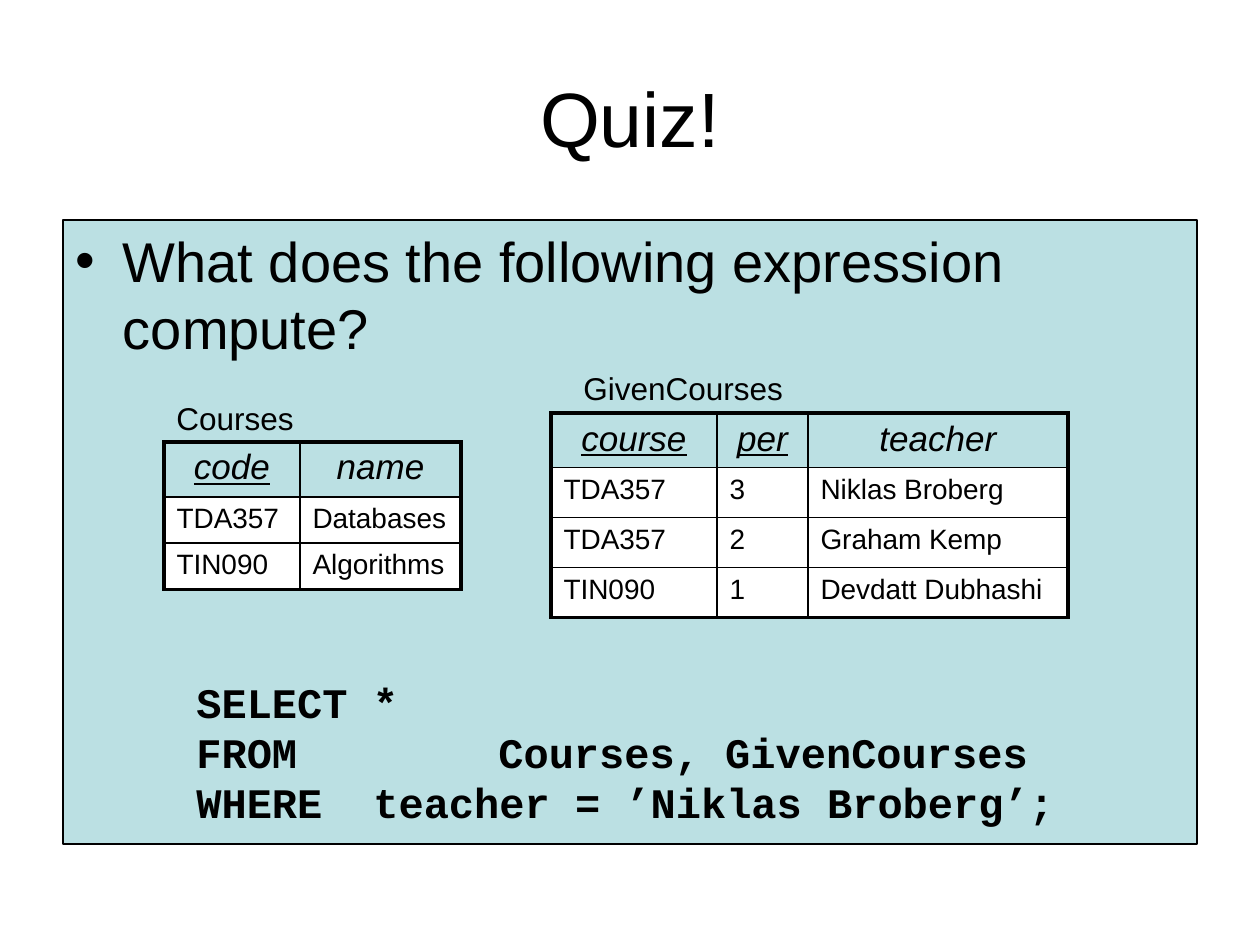
from collections import namedtuple

from lxml.etree import SubElement
from pptx import Presentation
from pptx.dml.color import RGBColor
from pptx.enum.text import MSO_ANCHOR as Anchor, MSO_AUTO_SIZE as AutoSize, PP_ALIGN as Align
from pptx.oxml.ns import qn
from pptx.util import Emu, Pt

PX = 914400 / 126
COLORS = {"ink": "000000", "panel": "BBE0E3", "cell": "FFFFFF"}
THICK, THIN = 2.25, 1
Box = namedtuple("Box", "left top width height")


def px(length):
    return Emu(round(length * PX))


def color(name):
    return RGBColor.from_string(COLORS[name])


def inside(box, left, top, width, height):
    return Box(box.left + left, box.top + top, width, height)


def place(shape, box):
    shape.left, shape.top, shape.width, shape.height = map(px, box)


def set_font(para, size, name="Arial", bold=False, italic=False):
    font = para.font
    font.name, font.size, font.bold, font.italic = name, Pt(size), bold, italic
    font.color.rgb = color("ink")


def add_title(page, box, text):
    title = page.shapes.title
    place(title, box)
    title.text_frame.text = text
    title.text_frame.vertical_anchor = Anchor.MIDDLE
    set_font(title.text_frame.paragraphs[0], 44)


def add_question(page, box, text):
    panel = page.placeholders[1]
    place(panel, box)
    panel.fill.solid()
    panel.fill.fore_color.rgb = color("panel")
    panel.line.color.rgb = color("ink")
    panel.line.width = Pt(0.75)
    panel.text_frame.auto_size = AutoSize.NONE
    panel.text_frame.text = text
    set_font(panel.text_frame.paragraphs[0], 32)


def add_text_box(page, box):
    frame = page.shapes.add_textbox(*map(px, box)).text_frame
    frame.word_wrap = True
    return frame


def add_tab_stop(para, position):
    properties = para._p.get_or_add_pPr()
    stops = SubElement(properties, qn("a:tabLst"))
    SubElement(stops, qn("a:tab"), pos=str(px(position)), algn="l")


def add_query(page, box, clauses):
    frame = add_text_box(page, box)
    for index, (text, tab) in enumerate(clauses):
        para = frame.add_paragraph() if index else frame.paragraphs[0]
        para.text = text
        if tab:
            add_tab_stop(para, tab)
        set_font(para, 24, name="Courier New", bold=True)
    frame.paragraphs[0].space_before = Pt(6)


def add_label(page, box, text):
    frame = add_text_box(page, box)
    frame.text = text
    set_font(frame.paragraphs[0], 18)
    frame.paragraphs[0].space_before = Pt(2)


def set_borders(cell, widths):
    properties = cell._tc.get_or_add_tcPr()
    for index, (side, width) in enumerate(widths.items()):
        line = SubElement(properties, qn(f"a:ln{side}"), w=str(Pt(width)))
        fill = SubElement(line, qn("a:solidFill"))
        SubElement(fill, qn("a:srgbClr"), val=COLORS["ink"])
        properties.insert(index, line)


def add_relation(page, box, columns, heights, rows, keys):
    frame = page.shapes.add_table(len(rows), len(columns), *map(px, box))
    table = frame.table
    table.first_row = table.horz_banding = False
    for column, width in zip(table.columns, columns):
        column.width = px(width)
    last_row, last_column = len(rows) - 1, len(columns) - 1
    for r, values in enumerate(rows):
        header = r == 0
        table.rows[r].height = px(heights[r])
        for c, value in enumerate(values):
            cell = table.cell(r, c)
            cell.text = value
            cell.fill.solid()
            cell.fill.fore_color.rgb = color("panel" if header else "cell")
            para = cell.text_frame.paragraphs[0]
            para.alignment = Align.CENTER if header else Align.LEFT
            set_font(para, 20 if header else 16, italic=header)
            para.font.underline = header and value in keys
            set_borders(cell, {
                "L": THICK if c == 0 else THIN,
                "R": THICK if c == last_column else THIN,
                "T": THICK if header else THIN,
                "B": THICK if r == last_row else THIN,
            })


def add_quiz(page, box):
    add_question(page, box, "What does the following expression compute?")
    add_query(page, inside(box, 121, 450, 883, 164), [
        ("SELECT *", None),
        ("FROM\tCourses, GivenCourses", 302),
        ("WHERE\tteacher = ’Niklas Broberg’;", 177),
    ])
    add_relation(page, inside(box, 488, 193, 517, 204), [166, 91, 260], [54, 50, 50, 50], [
        ("course", "per", "teacher"),
        ("TDA357", "3", "Niklas Broberg"),
        ("TDA357", "2", "Graham Kemp"),
        ("TIN090", "1", "Devdatt Dubhashi"),
    ], keys={"course", "per"})
    add_relation(page, inside(box, 101, 222, 297, 147), [136, 161], [55, 46, 46], [
        ("code", "name"),
        ("TDA357", "Databases"),
        ("TIN090", "Algorithms"),
    ], keys={"code"})
    add_label(page, inside(box, 101, 173, 297, 50), "Courses")
    add_label(page, inside(box, 508, 143, 297, 50), "GivenCourses")


def main():
    deck = Presentation()
    deck.slide_width, deck.slide_height = px(1260), px(945)
    page = deck.slides.add_slide(deck.slide_layouts[1])
    add_title(page, Box(63, 38, 1134, 158), "Quiz!")
    add_quiz(page, Box(63, 220, 1134, 624))
    deck.save("out.pptx")


if __name__ == "__main__":
    main()
